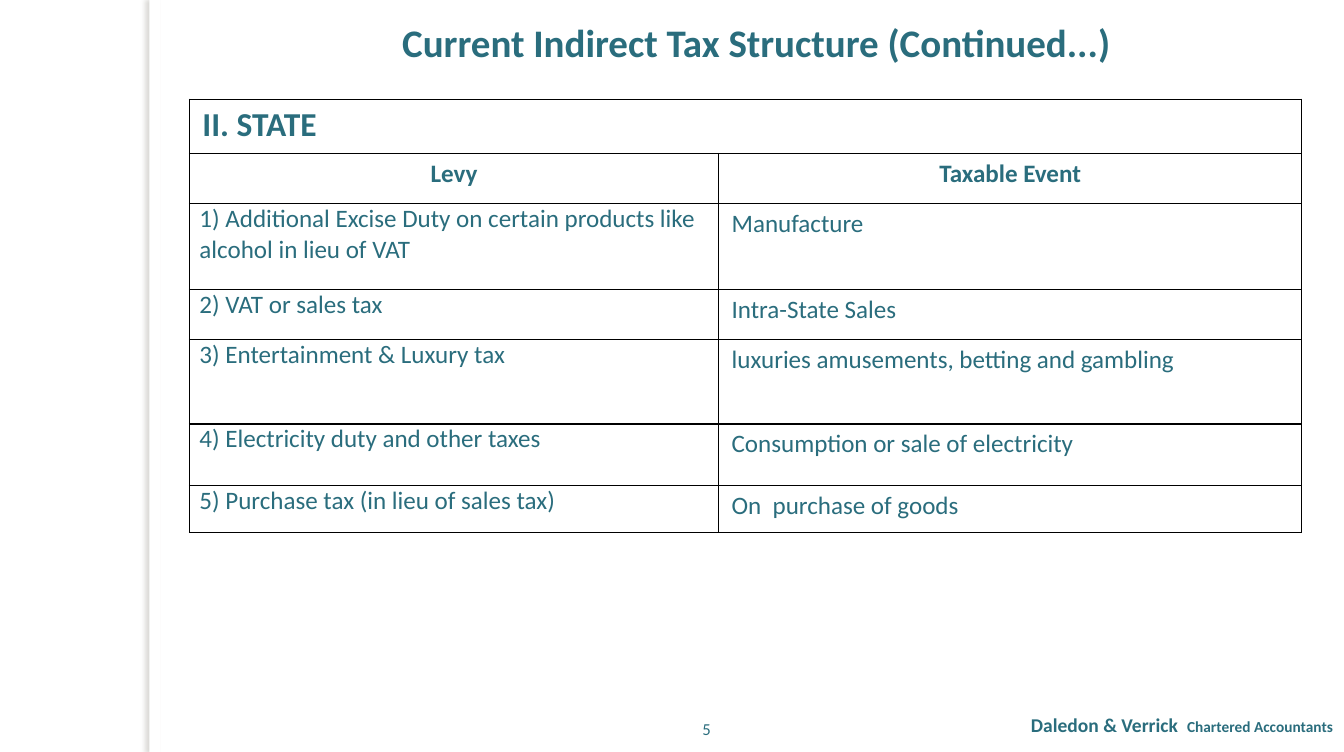
"""Build the slide on state-level indirect taxes."""
from dataclasses import dataclass

from lxml.etree import SubElement
from pptx import Presentation
from pptx.dml.color import RGBColor
from pptx.enum.shapes import MSO_SHAPE
from pptx.enum.text import MSO_ANCHOR, PP_ALIGN
from pptx.oxml import parse_xml
from pptx.oxml.ns import nsdecls, qn
from pptx.util import Emu, Pt

PX = 9144
FONT = "Calibri"
TEAL = "2A6D7D"
WHITE = "FFFFFF"
BLACK = "000000"
SHADOW = "736F63"
COLUMN_WIDTHS = (528, 582)
WIDE_INSETS = (13, 5)
TIGHT_INSETS = (10, 0)


@dataclass(frozen=True)
class Box:
    left: int
    top: int
    width: int
    height: int

    def emu(self) -> tuple[Emu, ...]:
        return tuple(px(value) for value in (self.left, self.top, self.width, self.height))


@dataclass(frozen=True)
class TextStyle:
    size: int
    bold: bool = False
    align: PP_ALIGN = PP_ALIGN.LEFT


@dataclass(frozen=True)
class TaxRow:
    height: int
    levy: str
    event: str


HEADING = TextStyle(24, True)
COLUMN_HEAD = TextStyle(18, True, PP_ALIGN.CENTER)
BODY = TextStyle(18)
TITLE = TextStyle(28, True, PP_ALIGN.CENTER)
FOOTER = TextStyle(14, True, PP_ALIGN.RIGHT)
PAGE_NUMBER = TextStyle(12, False, PP_ALIGN.CENTER)

TAX_ROWS = (
    TaxRow(86, "1) Additional Excise Duty on certain products like alcohol in lieu of VAT", "Manufacture"),
    TaxRow(50, "2) VAT or sales tax", "Intra-State Sales"),
    TaxRow(84, "3) Entertainment & Luxury tax", "luxuries amusements, betting and gambling"),
    TaxRow(61, "4) Electricity duty and other taxes", "Consumption or sale of electricity"),
    TaxRow(47, "5) Purchase tax (in lieu of sales tax)", "On  purchase of goods"),
)
ROW_HEIGHTS = (54, 50, *(row.height for row in TAX_ROWS))


def px(value: int) -> Emu:
    return Emu(value * PX)


def color(value: str) -> RGBColor:
    return RGBColor.from_string(value)


def write(frame, text: str, style: TextStyle):
    frame.word_wrap = True
    paragraph = frame.paragraphs[0]
    paragraph.text = text
    paragraph.alignment = style.align
    paragraph.font.name = FONT
    paragraph.font.size = Pt(style.size)
    paragraph.font.bold = style.bold
    paragraph.font.color.rgb = color(TEAL)
    return paragraph


def add_text(slide, box: Box, text: str, style: TextStyle):
    return write(slide.shapes.add_textbox(*box.emu()).text_frame, text, style)


def add_side_edge(slide) -> None:
    shape = slide.shapes.add_shape(MSO_SHAPE.RECTANGLE, *Box(149, 0, 11, 750).emu())
    shape.fill.solid()
    shape.fill.fore_color.rgb = color(WHITE)
    shape.line.fill.background()
    shape.shadow.inherit = False
    effects = shape.element.spPr.find(qn("a:effectLst"))
    shadow = SubElement(effects, qn("a:outerShdw"), blurRad=str(Pt(3)), dist=str(Pt(3)),
                        dir="10800000", algn="r", rotWithShape="0")
    tint = SubElement(shadow, qn("a:srgbClr"), val=SHADOW)
    SubElement(tint, qn("a:alpha"), val="25000")


def style_cell(cell) -> None:
    cell.fill.solid()
    cell.fill.fore_color.rgb = color(WHITE)
    properties = cell._tc.get_or_add_tcPr()
    for position, side in enumerate(("lnL", "lnR", "lnT", "lnB")):
        properties.insert(position, parse_xml(
            f'<a:{side} {nsdecls("a")} w="{Pt(1)}"><a:solidFill>'
            f'<a:srgbClr val="{BLACK}"/></a:solidFill></a:{side}>'))


def fill_cell(cell, text: str, style: TextStyle, insets: tuple[int, int] = WIDE_INSETS) -> None:
    cell.margin_left = cell.margin_right = px(insets[0])
    cell.margin_top = cell.margin_bottom = px(insets[1])
    write(cell.text_frame, text, style)


def add_tax_table(slide) -> None:
    box = Box(189, 99, sum(COLUMN_WIDTHS), sum(ROW_HEIGHTS))
    table = slide.shapes.add_table(len(ROW_HEIGHTS), len(COLUMN_WIDTHS), *box.emu()).table
    for column, width in zip(table.columns, COLUMN_WIDTHS):
        column.width = px(width)
    for row, height in zip(table.rows, ROW_HEIGHTS):
        row.height = px(height)
    for cell in table.iter_cells():
        style_cell(cell)
    table.cell(0, 0).merge(table.cell(0, 1))
    fill_cell(table.cell(0, 0), "II. STATE", HEADING)
    for index, text in enumerate(("Levy", "Taxable Event")):
        fill_cell(table.cell(1, index), text, COLUMN_HEAD)
    for index, tax in enumerate(TAX_ROWS, start=2):
        fill_cell(table.cell(index, 0), tax.levy, BODY, TIGHT_INSETS)
        fill_cell(table.cell(index, 1), tax.event, BODY)


def add_title(slide) -> None:
    title = slide.shapes.title
    title.left, title.top, title.width, title.height = Box(168, 13, 1173, 57).emu()
    title.text_frame.vertical_anchor = MSO_ANCHOR.TOP
    write(title.text_frame, "Current Indirect Tax Structure (Continued...)", TITLE)


def add_footer(slide) -> None:
    paragraph = add_text(slide, Box(670, 706, 670, 44), "Daledon & Verrick  ", FOOTER)
    role = paragraph.add_run()
    role.text = "Chartered Accountants"
    role.font.size = Pt(11)
    add_text(slide, Box(670, 712, 70, 30), "5", PAGE_NUMBER)


def main() -> None:
    presentation = Presentation()
    presentation.slide_width, presentation.slide_height = px(1341), px(750)
    slide = presentation.slides.add_slide(presentation.slide_layouts.get_by_name("Title Only"))
    add_side_edge(slide)
    add_tax_table(slide)
    add_title(slide)
    add_footer(slide)
    presentation.save("out.pptx")


if __name__ == "__main__":
    main()
